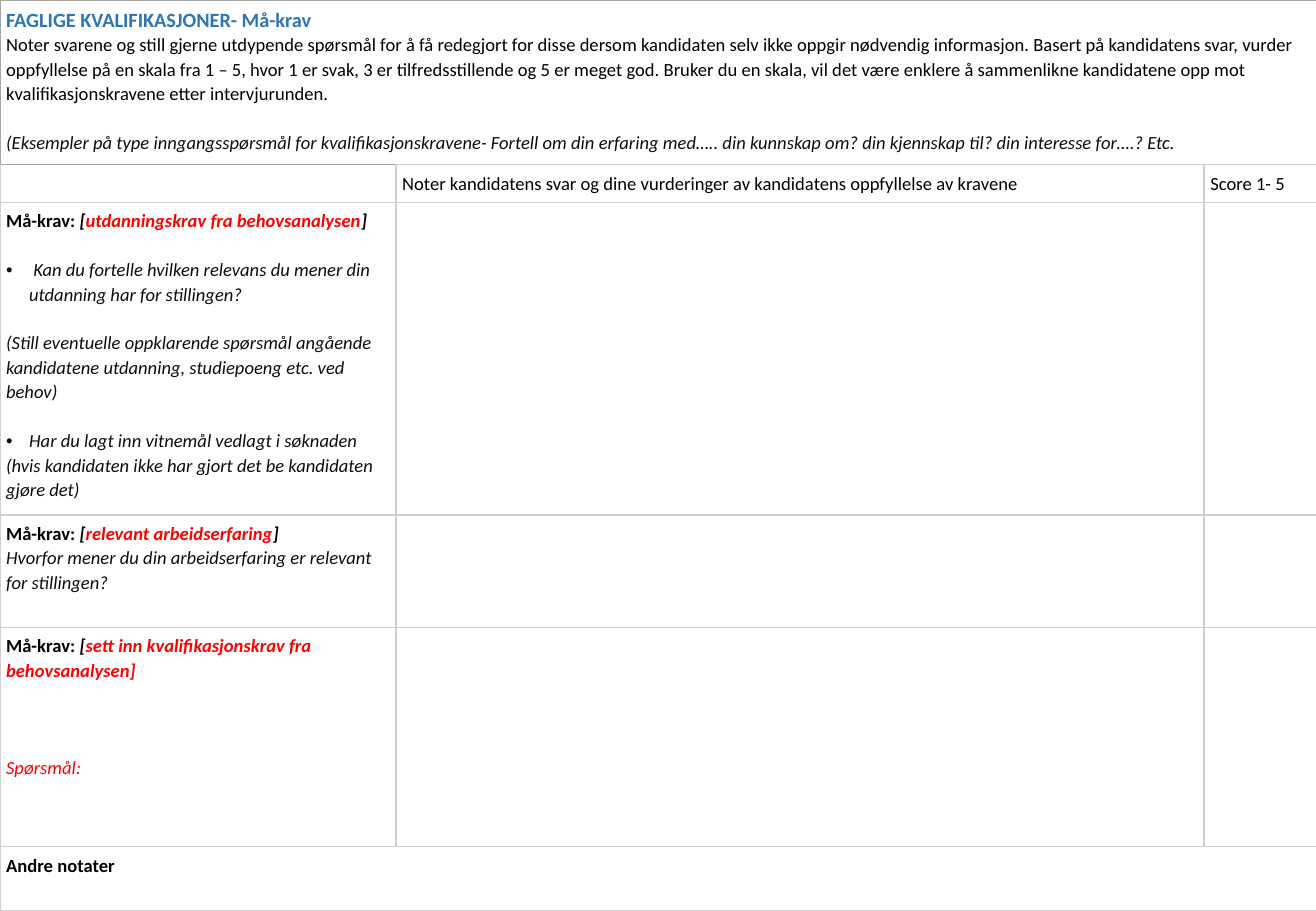
from lxml.etree import SubElement
from pptx import Presentation
from pptx.dml.color import RGBColor
from pptx.oxml.ns import qn
from pptx.util import Inches, Pt

COLORS = {
    "heading": "2E75B6",
    "text": "000000",
    "soft": "0D0D0D",
    "fill_in": "FF0000",
    "grid": "D0CECE",
    "frame": "A5A5A5",
}
FONT = "Calibri"
TEXT_SIZE = 11
LINE_SPACING = 1.07
BLANK_LINE = 14.4
CELL_MARGIN = 0.05
BULLET_INDENT = 0.19

STYLES = {
    "heading": ("heading", 12, True, False),
    "plain": ("text", TEXT_SIZE, False, False),
    "bold": ("text", TEXT_SIZE, True, False),
    "bracket": ("text", TEXT_SIZE, True, True),
    "fill_in": ("fill_in", TEXT_SIZE, True, True),
    "prompt": ("fill_in", TEXT_SIZE, False, True),
    "question": ("soft", TEXT_SIZE, False, True),
}

COLUMN_WIDTHS = [3.26, 6.65, 0.94]
ROW_HEIGHTS = [1.36, 0.31, 2.58, 0.93, 1.81, 0.53]

INTRO = [
    [("FAGLIGE KVALIFIKASJONER- Må-krav", "heading")],
    [("Noter svarene og still gjerne utdypende spørsmål for å få redegjort for disse "
      "dersom kandidaten selv ikke oppgir nødvendig informasjon. Basert på kandidatens "
      "svar, vurder oppfyllelse på en skala fra 1 – 5, hvor 1 er svak, 3 er "
      "tilfredsstillende og 5 er meget god. Bruker du en skala, vil det være enklere å "
      "sammenlikne kandidatene opp mot kvalifikasjonskravene etter intervjurunden.", "plain")],
    [("(Eksempler på type inngangsspørsmål for kvalifikasjonskravene- Fortell om din "
      "erfaring med….. din kunnskap om? din kjennskap til? din interesse for….? Etc.",
      "question")],
]
COLUMN_HEADINGS = [
    "Noter kandidatens svar og dine vurderinger av kandidatens oppfyllelse av kravene",
    "Score 1- 5",
]
EDUCATION = [
    [("Må-krav: ", "bold"), ("[", "bracket"),
     ("utdanningskrav fra behovsanalysen", "fill_in"), ("]", "bracket")],
    [(" Kan du fortelle hvilken relevans du mener din utdanning har for stillingen?",
      "question")],
    [("(Still eventuelle oppklarende spørsmål angående kandidatene utdanning, "
      "studiepoeng etc. ved behov)", "question")],
    [("Har du lagt inn vitnemål vedlagt i søknaden", "question")],
    [("(hvis kandidaten ikke har gjort det be kandidaten gjøre det)", "question")],
]
EXPERIENCE = [
    [("Må-krav: ", "bold"), ("[", "bracket"),
     ("relevant arbeidserfaring", "fill_in"), ("]", "bracket")],
    [("Hvorfor mener du din arbeidserfaring er relevant for stillingen?", "question")],
]
QUALIFICATION = [
    [("Må-krav: ", "bold"), ("[", "bracket"),
     ("sett inn kvalifikasjonskrav fra behovsanalysen]", "fill_in")],
    [("Spørsmål:", "prompt")],
]
OTHER_NOTES = [[("Andre notater", "bold")]]


def add_bullet(paragraph):
    properties = paragraph._p.get_or_add_pPr()
    indent = Inches(BULLET_INDENT)
    properties.set("marL", str(indent))
    properties.set("indent", str(-indent))
    SubElement(properties, qn("a:buFont"), typeface="Arial")
    SubElement(properties, qn("a:buChar"), char="•")


def write_cell(cell, paragraphs, blanks_before=None, bullets=()):
    blanks_before = blanks_before or {}
    frame = cell.text_frame
    for index, runs in enumerate(paragraphs):
        paragraph = frame.add_paragraph() if index else frame.paragraphs[0]
        paragraph.line_spacing = LINE_SPACING
        paragraph.space_before = Pt(BLANK_LINE * blanks_before.get(index, 0))
        if index in bullets:
            add_bullet(paragraph)
        for wording, style in runs:
            color, size, bold, italic = STYLES[style]
            run = paragraph.add_run()
            run.text = wording
            run.font.name = FONT
            run.font.size = Pt(size)
            run.font.bold = bold
            run.font.italic = italic
            run.font.color.rgb = RGBColor.from_string(COLORS[color])


def frame_cell(cell, side_colors):
    properties = cell._tc.get_or_add_tcPr()
    for side, color in side_colors.items():
        line = SubElement(properties, qn(f"a:ln{side}"), w=str(Pt(1)))
        solid = SubElement(line, qn("a:solidFill"))
        SubElement(solid, qn("a:srgbClr"), val=COLORS[color])
    cell.fill.background()
    cell.margin_left = cell.margin_right = Inches(CELL_MARGIN)
    cell.margin_top = cell.margin_bottom = Inches(CELL_MARGIN)


def frame_grid(table):
    for row_index, row in enumerate(table.rows):
        for column_index, cell in enumerate(row.cells):
            side_colors = dict.fromkeys("LRTB", "frame" if row_index == 0 else "grid")
            if (row_index, column_index) == (1, 0):
                side_colors["T"] = "frame"
            frame_cell(cell, side_colors)
            if not cell.text_frame.text:
                SubElement(cell.text_frame.paragraphs[0]._p, qn("a:endParaRPr"),
                           sz=str(TEXT_SIZE * 100))


def add_interview_form(slide, left, top, width, height):
    table = slide.shapes.add_table(
        len(ROW_HEIGHTS), len(COLUMN_WIDTHS),
        Inches(left), Inches(top), Inches(width), Inches(height)).table
    table.first_row = False
    table.horz_banding = False
    for column, share in zip(table.columns, COLUMN_WIDTHS):
        column.width = Inches(share * width / sum(COLUMN_WIDTHS))
    for row, share in zip(table.rows, ROW_HEIGHTS):
        row.height = Inches(share * height / sum(ROW_HEIGHTS))

    last_row, last_column = len(ROW_HEIGHTS) - 1, len(COLUMN_WIDTHS) - 1
    for full_row in (0, last_row):
        table.cell(full_row, 0).merge(table.cell(full_row, last_column))

    write_cell(table.cell(0, 0), INTRO, {2: 1})
    for column_index, heading in enumerate(COLUMN_HEADINGS, 1):
        write_cell(table.cell(1, column_index), [[(heading, "plain")]])
    write_cell(table.cell(2, 0), EDUCATION, {1: 1, 2: 1, 3: 1}, bullets=(1, 3))
    write_cell(table.cell(3, 0), EXPERIENCE)
    write_cell(table.cell(4, 0), QUALIFICATION, {1: 3})
    write_cell(table.cell(last_row, 0), OTHER_NOTES)
    frame_grid(table)


def main():
    presentation = Presentation()
    presentation.slide_width = Inches(10.83)
    presentation.slide_height = Inches(7.5)
    slide = presentation.slides.add_slide(presentation.slide_layouts[6])
    add_interview_form(slide, 0, 0, 10.85, 7.5)
    presentation.save("out.pptx")


if __name__ == "__main__":
    main()
